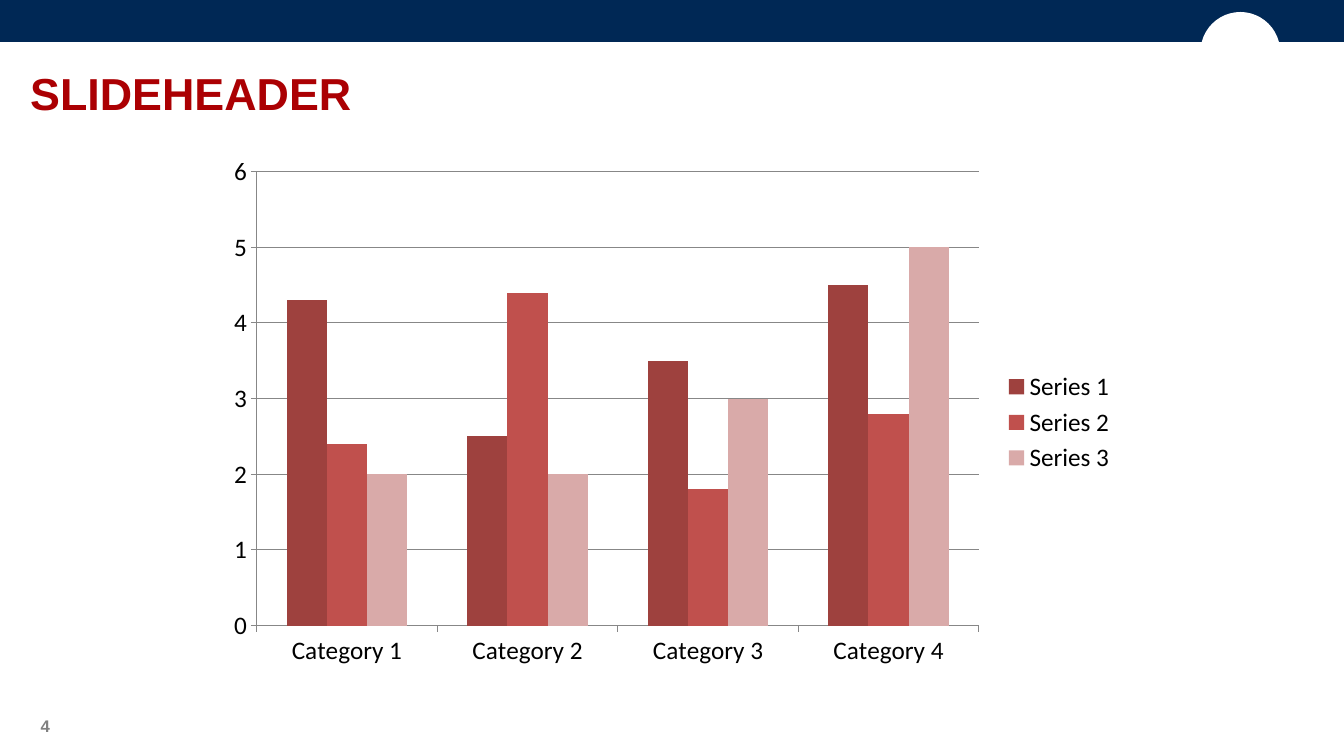
from lxml import etree
from pptx import Presentation
from pptx.chart.data import CategoryChartData
from pptx.dml.color import RGBColor
from pptx.enum.chart import XL_CHART_TYPE, XL_LEGEND_POSITION, XL_TICK_MARK
from pptx.enum.shapes import MSO_SHAPE
from pptx.enum.text import MSO_ANCHOR, PP_ALIGN
from pptx.oxml.ns import qn
from pptx.util import Pt

COLUMNS = XL_CHART_TYPE.COLUMN_CLUSTERED
LEGEND_RIGHT = XL_LEGEND_POSITION.RIGHT
TICK_OUTSIDE = XL_TICK_MARK.OUTSIDE
MIDDLE = MSO_ANCHOR.MIDDLE
LEFT, CENTER = PP_ALIGN.LEFT, PP_ALIGN.CENTER

NAVY = RGBColor(0x00, 0x28, 0x55)
WHITE = RGBColor(0xFF, 0xFF, 0xFF)
BLACK = RGBColor(0x00, 0x00, 0x00)
RED = RGBColor(0xAB, 0x00, 0x03)
GRAY = RGBColor(0x80, 0x80, 0x80)
AXIS_GRAY = RGBColor(0x87, 0x87, 0x87)
DARK_ROSE = RGBColor(0x9E, 0x41, 0x3E)
ROSE = RGBColor(0xC0, 0x50, 0x4D)
PALE_ROSE = RGBColor(0xD9, 0xAA, 0xA9)

# Content
TITLE = "SLIDEHEADER"
PAGE_NUMBER = "4"
CATEGORIES = ["Category 1", "Category 2", "Category 3", "Category 4"]
SERIES = [
    ("Series 1", (4.3, 2.5, 3.5, 4.5), DARK_ROSE),
    ("Series 2", (2.4, 4.4, 1.8, 2.8), ROSE),
    ("Series 3", (2, 2, 3, 5), PALE_ROSE),
]

# Boxes in points: left, top, width, height
SLIDE_SIZE = (960, 540)
BAND_BOX = (0, 0, 960, 28.8)
DISC_BOX = (857.5, 8.6, 56.9, 56.9)
TITLE_BOX = (14.4, 20.2, 753, 91.4)
CHART_BOX = (156.2, 111.6, 648, 380.2)
NUMBER_BOX = (14.4, 504, 36, 28.8)
PLOT_AREA = {"x": 0.042, "y": 0.029, "w": 0.796, "h": 0.853}


def points(values):
    return [Pt(value) for value in values]


def add_shape(slide, preset, box, color):
    shape = slide.shapes.add_shape(preset, *points(box))
    shape.shadow.inherit = False
    shape.fill.solid()
    shape.fill.fore_color.rgb = color
    shape.line.fill.background()
    return shape


def style_font(font, name, size, color, bold=False):
    font.name = name
    font.size = Pt(size)
    font.bold = bold
    font.color.rgb = color


def write_text(shape, text, size, color, alignment):
    frame = shape.text_frame
    frame.text = text
    frame.word_wrap = True
    frame.vertical_anchor = MIDDLE
    paragraph = frame.paragraphs[0]
    paragraph.alignment = alignment
    style_font(paragraph.runs[0].font, "Arial", size, color, bold=True)


def place_plot_area(chart):
    plot_area = chart.plots[0]._element.getparent()
    for old_layout in plot_area.findall(qn("c:layout")):
        plot_area.remove(old_layout)
    layout = etree.Element(qn("c:layout"))
    plot_area.insert(0, layout)
    manual = etree.SubElement(layout, qn("c:manualLayout"))
    settings = {"layoutTarget": "inner", "xMode": "edge", "yMode": "edge", **PLOT_AREA}
    for name, value in settings.items():
        etree.SubElement(manual, qn("c:" + name)).set("val", str(value))


def add_column_chart(slide):
    data = CategoryChartData()
    data.categories = CATEGORIES
    for name, values, _ in SERIES:
        data.add_series(name, values)
    chart = slide.shapes.add_chart(COLUMNS, *points(CHART_BOX), data).chart
    chart.has_title = False
    style_font(chart.font, "Calibri", 18, BLACK)

    # Columns
    plot = chart.plots[0]
    plot.gap_width = 150
    plot.overlap = 0
    plot.vary_by_categories = False
    for series, (_, _, color) in zip(plot.series, SERIES):
        series.format.fill.solid()
        series.format.fill.fore_color.rgb = color

    # Axes and gridlines
    value_axis = chart.value_axis
    value_axis.minimum_scale = 0
    value_axis.maximum_scale = 6
    value_axis.major_unit = 1
    value_axis.has_major_gridlines = True
    for axis in (chart.category_axis, value_axis):
        axis.major_tick_mark = TICK_OUTSIDE
    for part in (chart.category_axis, value_axis, value_axis.major_gridlines):
        part.format.line.color.rgb = AXIS_GRAY
        part.format.line.width = Pt(0.75)

    # Legend
    chart.has_legend = True
    chart.legend.position = LEGEND_RIGHT
    chart.legend.include_in_layout = False
    place_plot_area(chart)


def main():
    presentation = Presentation()
    presentation.slide_width, presentation.slide_height = points(SLIDE_SIZE)
    slide = presentation.slides.add_slide(presentation.slide_layouts[5])

    # Header band with its white disc
    band = add_shape(slide, MSO_SHAPE.RECTANGLE, BAND_BOX, NAVY)
    band.line.color.rgb = NAVY
    band.line.width = Pt(2)
    add_shape(slide, MSO_SHAPE.OVAL, DISC_BOX, WHITE)

    # Title
    title = slide.shapes.title
    title.left, title.top, title.width, title.height = points(TITLE_BOX)
    write_text(title, TITLE, 32, RED, LEFT)

    add_column_chart(slide)

    # Slide number
    number = slide.shapes.add_textbox(*points(NUMBER_BOX))
    write_text(number, PAGE_NUMBER, 12, GRAY, CENTER)

    presentation.save("out.pptx")


if __name__ == "__main__":
    main()
